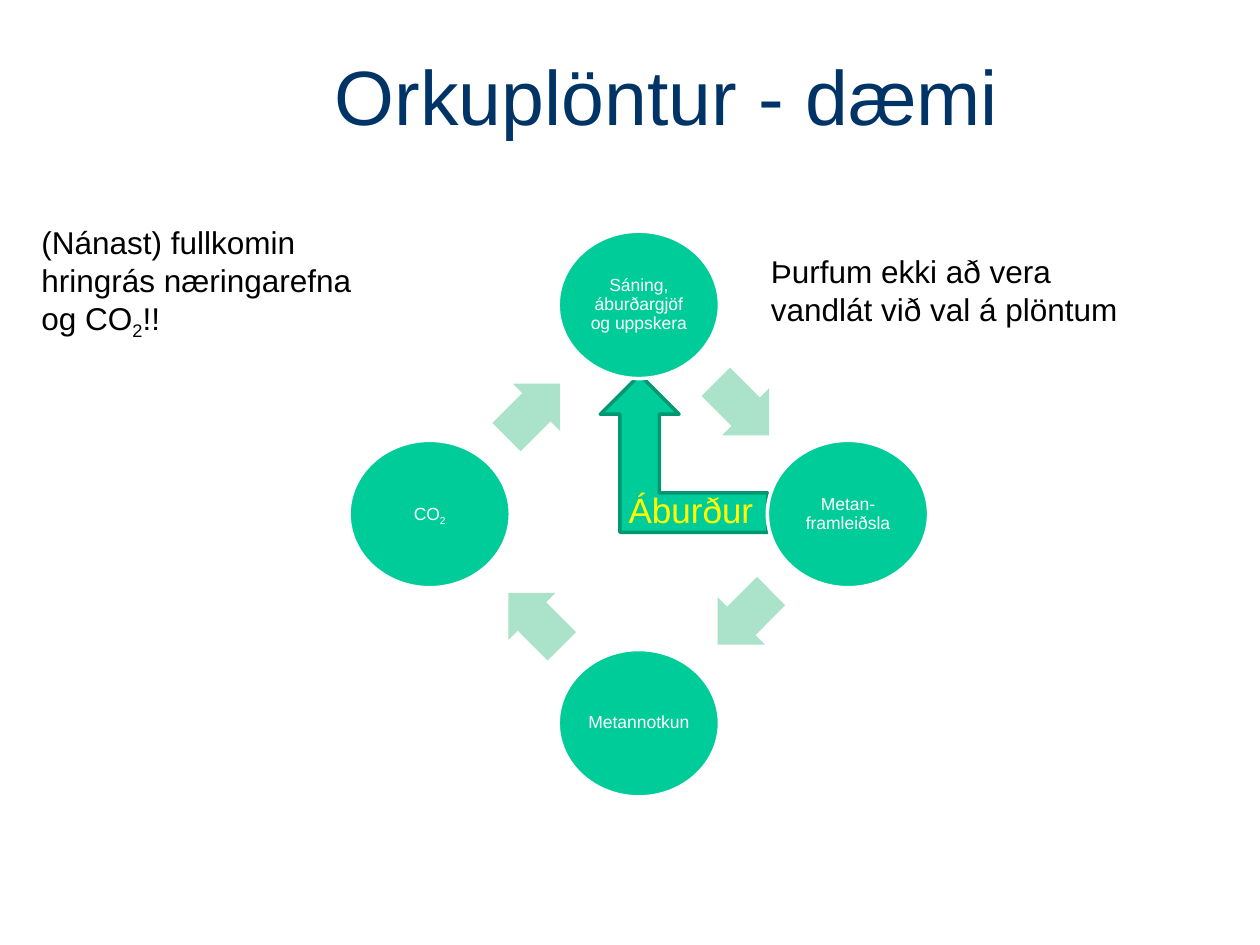
from math import cos, radians, sin, sqrt

from pptx import Presentation
from pptx.dml.color import RGBColor
from pptx.enum.shapes import MSO_SHAPE as Shape
from pptx.enum.text import MSO_ANCHOR as Anchor, PP_ALIGN as Align
from pptx.util import Inches, Pt

COLORS = {
    "title": "003366",
    "text": "000000",
    "circle": "00CC99",
    "outline": "009771",
    "arrow": "ABE2CA",
    "label": "FFFF00",
    "white": "FFFFFF",
}
CENTER_X, CENTER_Y, RADIUS = 5.07, 4.08, 1.66
STAGES = [
    [["Sáning, áburðargjöf og uppskera"]],
    [["Metan-framleiðsla"]],
    [["Metannotkun"]],
    [["CO", "2"]],
]


class CycleSlide:
    """Draws the elements of the energy crop cycle in one style."""

    font_name = "Arial"

    def __init__(self, slide):
        self.slide = slide

    def color(self, name):
        return RGBColor.from_string(COLORS[name])

    def fill_text(self, frame, lines, size, color, align=Align.LEFT, spacing=None):
        frame.word_wrap = True
        for index, line in enumerate(lines):
            paragraph = frame.add_paragraph() if index else frame.paragraphs[0]
            paragraph.alignment = align
            paragraph.line_spacing = spacing
            for text in line:
                run = paragraph.add_run()
                run.text = text
                if text == "2":
                    run.font._element.set("baseline", "-25000")
            paragraph.font.name = self.font_name
            paragraph.font.size = Pt(size)
            paragraph.font.color.rgb = self.color(color)

    def text(self, left, top, width, height, lines, size, color="text", anchor=Anchor.TOP):
        box = self.slide.shapes.add_textbox(Inches(left), Inches(top), Inches(width), Inches(height))
        box.text_frame.vertical_anchor = anchor
        self.fill_text(box.text_frame, lines, size, color)

    def shape(self, kind, x, y, width, height, fill, line=None):
        shape = self.slide.shapes.add_shape(
            kind, Inches(x - width / 2), Inches(y - height / 2), Inches(width), Inches(height)
        )
        shape.shadow.inherit = False
        shape.fill.solid()
        shape.fill.fore_color.rgb = self.color(fill)
        if line:
            shape.line.color.rgb = self.color(line)
            shape.line.width = Pt(2)
        else:
            shape.line.fill.background()
        return shape

    def circle(self, x, y, lines):
        circle = self.shape(Shape.OVAL, x, y, 1.28, 1.17, "circle", "white")
        frame = circle.text_frame
        frame.margin_left = frame.margin_right = Inches(0.01)
        frame.margin_top = frame.margin_bottom = Inches(0.01)
        frame.vertical_anchor = Anchor.MIDDLE
        self.fill_text(frame, lines, 10, "white", Align.CENTER, 0.9)

    def arrow(self, x, y, rotation):
        arrow = self.shape(Shape.RIGHT_ARROW, x, y, 0.6, 0.53, "arrow")
        arrow.adjustments[0] = 0.6
        arrow.adjustments[1] = 0.5
        arrow.rotation = rotation

    def return_arrow(self, x, y, width, height):
        arrow = self.shape(Shape.BENT_UP_ARROW, x, y, width, height, "circle", "outline")
        arrow._element.spPr.xfrm.set("flipH", "1")

    def cycle(self, stages):
        for index, lines in enumerate(stages):
            heading = 45 + 90 * index
            stage_angle = radians(heading - 135)
            self.circle(
                CENTER_X + RADIUS * cos(stage_angle), CENTER_Y + RADIUS * sin(stage_angle), lines
            )
            middle, direction = radians(heading - 90), radians(heading)
            distance, setback = RADIUS / sqrt(2), 0.01
            self.arrow(
                CENTER_X + distance * cos(middle) - setback * cos(direction),
                CENTER_Y + distance * sin(middle) - setback * sin(direction),
                heading,
            )


def main():
    presentation = Presentation()
    presentation.slide_width = Inches(10)
    presentation.slide_height = Inches(7.5)
    page = CycleSlide(presentation.slides.add_slide(presentation.slide_layouts[6]))

    page.return_arrow(5.43, 3.6, 1.33, 1.25)
    page.text(2.56, 0.13, 7.16, 1.25, [["Orkuplöntur - dæmi"]], 44, "title", Anchor.MIDDLE)
    page.cycle(STAGES)
    page.text(4.89, 3.83, 1.28, 0.44, [["Áburður"]], 20, "label")
    page.text(
        0.23, 1.72, 3.52, 1.31,
        [["(Nánast) fullkomin"], ["hringrás næringarefna"], ["og CO", "2", "!!"]], 18,
    )
    page.text(
        6.02, 1.95, 3.91, 0.91, [["Þurfum ekki að vera"], ["vandlát við val á plöntum"]], 18
    )
    presentation.save("out.pptx")


if __name__ == "__main__":
    main()
